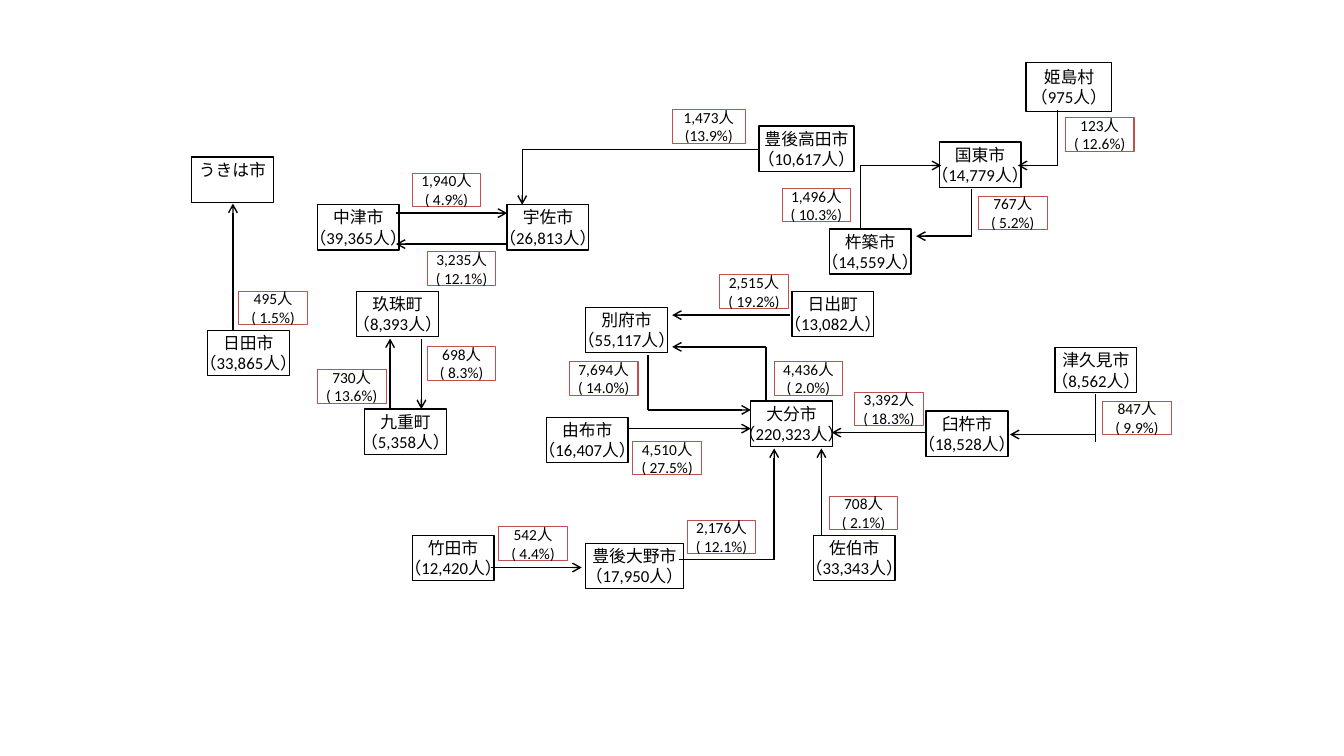
from itertools import pairwise

from lxml.etree import SubElement
from pptx import Presentation
from pptx.dml.color import RGBColor
from pptx.enum.shapes import MSO_CONNECTOR, MSO_SHAPE
from pptx.enum.text import MSO_ANCHOR, PP_ALIGN
from pptx.oxml.ns import qn
from pptx.util import Cm, Pt

BLACK, WHITE, RED = "000000", "FFFFFF", "C0504D"
FONT = "Calibri"
SLIDE_WIDTH, SLIDE_HEIGHT = 33.87, 19.05
TOWN_WIDTH, TOWN_HEIGHT = 2.06, 1.14
LABEL_WIDTH, LABEL_HEIGHT = 1.73, 0.84

# Lines of text, left, top, then width and height where they differ (cm)
TOWNS = [
    (["国東市", "（14,779人）"], 23.67, 3.58),
    (["姫島村", "（975人）"], 25.86, 1.57, 2.16, 1.24),
    (["杵築市", "（14,559人）"], 20.9, 5.77),
    (["別府市", "（55,117人）"], 14.76, 7.75),
    (["由布市", "（16,407人）"], 13.77, 10.52),
    (["九重町", "（5,358人）"], 9.19, 10.31),
    (["玖珠町", "（8,393人）"], 8.99, 7.34),
    (["日田市", "（33,865人）"], 5.23, 8.33),
    (["中津市", "（39,365人）"], 8, 5.16),
    (["宇佐市", "（26,813人）"], 12.78, 5.16),
    (["豊後高田市", "（10,617人）"], 19.13, 3.18, 2.39),
    (["津久見市", "（8,562人）"], 26.59, 8.76),
    (["佐伯市", "（33,343人）"], 20.5, 13.49),
    (["臼杵市", "（18,528人）"], 23.34, 10.36),
    (["大分市", "（220,323人）"], 18.92, 10.11),
    (["豊後大野市", "（17,950人）"], 14.76, 13.69, 2.46),
    (["竹田市", "（12,420人）"], 10.39, 13.49),
    (["日出町", "（13,082人）"], 19.96, 7.34),
    (["うきは市"], 4.83, 3.96),
]

# Route from the home town to the destination, then label text, left, top
# and, where it differs, label width (cm)
FLOWS = [
    ([(19.15, 3.77), (13.16, 3.77), (13.16, 5.16)], ["1,473人", "(13.9%)"], 16.94, 2.77, 1.85),
    ([(26.65, 2.77), (26.65, 4.17), (25.65, 4.17)], ["123人", "( 12.6%)"], 26.85, 2.97),
    ([(21.69, 5.77), (21.69, 4.17), (23.72, 4.17)], ["1,496人", "( 10.3%)"], 19.71, 4.75),
    ([(24.49, 4.75), (24.49, 5.95), (23.09, 5.95)], ["767人", "( 5.2%)"], 24.66, 4.95),
    ([(5.87, 8.33), (5.87, 5.13)], ["495人", "( 1.5%)"], 6.02, 7.34),
    ([(9.98, 5.37), (12.78, 5.37)], ["1,940人", "( 4.9%)"], 10.39, 4.37),
    ([(12.78, 6.15), (9.98, 6.15)], ["3,235人", "( 12.1%)"], 10.77, 6.35),
    ([(9.83, 10.31), (9.83, 8.53)], ["730人", "( 13.6%)"], 8, 9.32),
    ([(10.62, 8.53), (10.62, 10.31)], ["698人", "( 8.3%)"], 10.77, 8.74),
    ([(19.91, 7.94), (16.94, 7.94)], ["2,515人", "( 19.2%)"], 18.14, 6.93),
    ([(19.3, 10.11), (19.3, 8.74), (16.94, 8.74)], ["4,436人", "( 2.0%)"], 19.51, 9.12),
    ([(16.33, 8.94), (16.33, 10.33), (18.92, 10.33)], ["7,694人", "( 14.0%)"], 14.35, 9.12),
    ([(15.82, 10.8), (18.92, 10.8)], ["4,510人", "( 27.5%)"], 15.95, 11.13),
    ([(27.61, 9.93), (27.61, 11.13), (27.61, 10.95), (25.45, 10.95)],
     ["847人", "( 9.9%)"], 27.79, 10.11),
    ([(23.32, 10.9), (20.96, 10.9)], ["3,392人", "( 18.3%)"], 21.54, 9.88),
    ([(20.7, 13.49), (20.7, 11.3)], ["708人", "( 2.1%)"], 20.9, 12.5),
    ([(17.12, 14.1), (19.51, 14.1), (19.51, 11.3)], ["2,176人", "( 12.1%)"], 17.32, 13.11),
    ([(12.37, 14.3), (14.66, 14.3)], ["542人", "( 4.4%)"], 12.57, 13.28),
]


def color(hex_string):
    return RGBColor.from_string(hex_string)


def add_box(slide, lines, left, top, width, height, border, border_width, size):
    """Add a white bordered box with centred lines; a lone line sits at the top."""
    shape = slide.shapes.add_shape(
        MSO_SHAPE.RECTANGLE, Cm(left), Cm(top), Cm(width), Cm(height))
    shape.shadow.inherit = False
    shape.fill.solid()
    shape.fill.fore_color.rgb = color(WHITE)
    shape.line.color.rgb = color(border)
    shape.line.width = Pt(border_width)
    frame = shape.text_frame
    frame.word_wrap = False
    frame.margin_top = frame.margin_bottom = Cm(0.06)
    frame.vertical_anchor = MSO_ANCHOR.MIDDLE if len(lines) > 1 else MSO_ANCHOR.TOP
    for index, line in enumerate(lines):
        paragraph = frame.add_paragraph() if index else frame.paragraphs[0]
        paragraph.text = line
        paragraph.alignment = PP_ALIGN.CENTER
        paragraph.font.name = FONT
        paragraph.font.size = Pt(size)
        paragraph.font.color.rgb = color(BLACK)


def add_route(slide, left, top, points):
    """Join the points with straight lines and put an arrowhead on the last."""
    for start, end in pairwise(points):
        connector = slide.shapes.add_connector(
            MSO_CONNECTOR.STRAIGHT, Cm(left + start[0]), Cm(top + start[1]),
            Cm(left + end[0]), Cm(top + end[1]))
        connector.line.color.rgb = color(BLACK)
        connector.line.width = Pt(1)
        SubElement(connector._element.spPr, qn("a:effectLst"))
    SubElement(connector.line._get_or_add_ln(), qn("a:tailEnd"), type="arrow")


def add_towns(slide, left, top):
    for lines, x, y, *size in TOWNS:
        width, height = size + [TOWN_WIDTH, TOWN_HEIGHT][len(size):]
        add_box(slide, lines, left + x, top + y, width, height, BLACK, 1, 12)


def add_flows(slide, left, top):
    for points, *_ in FLOWS:
        add_route(slide, left, top, points)
    for _, lines, x, y, *size in FLOWS:
        width = size[0] if size else LABEL_WIDTH
        add_box(slide, lines, left + x, top + y, width, LABEL_HEIGHT, RED, 0.75, 11)


def main():
    presentation = Presentation()
    presentation.slide_width = Cm(SLIDE_WIDTH)
    presentation.slide_height = Cm(SLIDE_HEIGHT)
    slide = presentation.slides.add_slide(presentation.slide_layouts[6])
    add_towns(slide, 0, 0)
    add_flows(slide, 0, 0)
    presentation.save("out.pptx")


if __name__ == "__main__":
    main()
